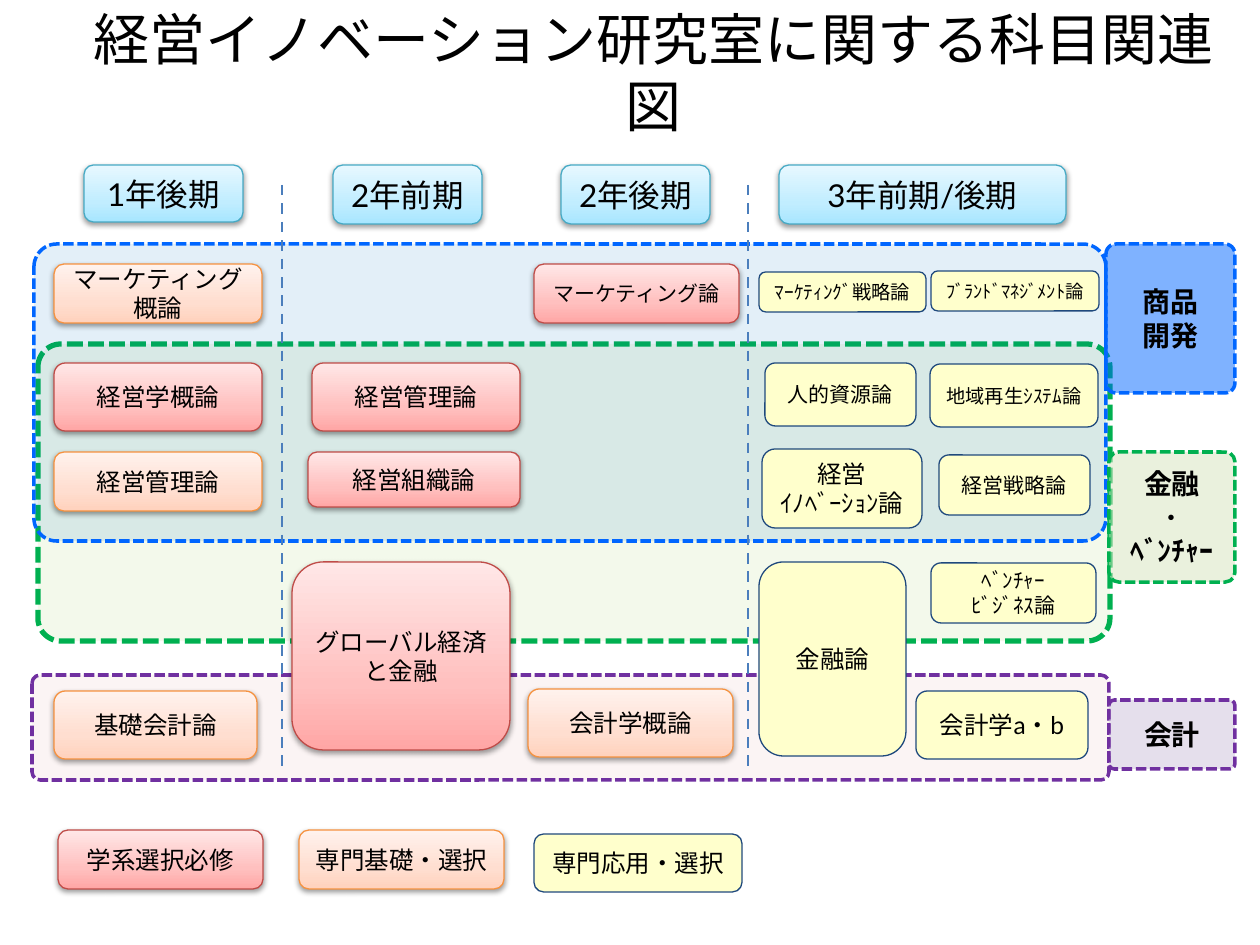
from copy import deepcopy

from lxml.etree import SubElement
from pptx import Presentation
from pptx.dml.color import RGBColor
from pptx.enum.dml import MSO_LINE
from pptx.enum.shapes import MSO_CONNECTOR, MSO_SHAPE
from pptx.enum.text import MSO_ANCHOR, PP_ALIGN
from pptx.oxml.ns import qn
from pptx.util import Emu, Pt

SCALE = 914400 / 126
COLORS = {
    "black": "000000", "navy": "1F497D", "cream": "FFFFCC", "rule": "4B7EBC",
    "blue": "0066FF", "sky": "0070C0", "green": "00B050", "lime": "92D050",
    "sage": "D7E4BD", "purple": "7030A0", "lilac": "CCC1DA", "brick": "C0504D",
    "red_line": "BF4C48", "orange_line": "F69240", "aqua_line": "46AAC5",
    "red_low": "FFA6A5", "red_mid": "FFC0BF", "red_top": "FFE7E7",
    "orange_low": "FFD2BD", "orange_mid": "FFDED0", "orange_top": "FFF2ED",
    "aqua_low": "A7E6FF", "aqua_mid": "C1EDFF", "aqua_top": "E7F8FF",
}

# box in px, fill, opacity in percent, line, line width
BANDS = [
    ((32, 675, 1077, 105), "brick", 6, "purple", 2),
    ((38, 344, 1072, 297), "lime", 11, "green", 3),
    ((34, 244, 1072, 297), "sky", 11, "blue", 2),
]
# box, fill, line, text
TAGS = [
    ((1109, 452, 126, 130), "sage", "green", "金融\n･\nﾍﾞﾝﾁｬｰ"),
    ((1109, 700, 126, 69), "lilac", "purple", "会計"),
    ((1106, 244, 129, 149), "blue", "blue", "商品\n開発"),
]
# kind, text size, then (box, text) pairs
CARDS = [
    ("aqua", 18, [
        ((84, 165, 159, 57), "1年後期"),
        ((333, 165, 149, 59), "2年前期"),
        ((561, 165, 149, 59), "2年後期"),
        ((779, 165, 287, 59), "3年前期/後期"),
    ]),
    ("orange", 14, [
        ((54, 264, 208, 59), "マーケティング概論"),
        ((54, 452, 208, 59), "経営管理論"),
        ((54, 691, 203, 68), "基礎会計論"),
        ((528, 689, 205, 68), "会計学概論"),
        ((299, 830, 205, 59), "専門基礎・選択"),
    ]),
    ("red", 14, [
        ((54, 363, 208, 68), "経営学概論"),
        ((312, 363, 208, 68), "経営管理論"),
        ((308, 452, 212, 55), "経営組織論"),
        ((292, 562, 218, 188), "グローバル経済と金融"),
        ((58, 830, 205, 59), "学系選択必修"),
    ]),
    ("red", 12, [((534, 264, 205, 59), "マーケティング論")]),
    ("cream", 14, [
        ((762, 449, 160, 79), "経営\nｲﾉﾍﾞｰｼｮﾝ論"),
        ((759, 562, 147, 194), "金融論"),
        ((916, 691, 172, 68), "会計学a・b"),
        ((534, 834, 208, 58), "専門応用・選択"),
    ]),
    ("cream", 12, [
        ((765, 363, 151, 63), "人的資源論"),
        ((939, 455, 151, 60), "経営戦略論"),
        ((931, 563, 165, 60), "ﾍﾞﾝﾁｬｰ\nﾋﾞｼﾞﾈｽ論"),
    ]),
    ("cream", 11, [
        ((759, 272, 167, 40), "ﾏｰｹﾃｨﾝｸﾞ戦略論"),
        ((930, 364, 168, 63), "地域再生ｼｽﾃﾑ論"),
    ]),
    ("cream", 10.5, [((931, 271, 168, 40), "ﾌﾞﾗﾝﾄﾞﾏﾈｼﾞﾒﾝﾄ論")]),
]
RULES = [282, 748]


def px(n):
    return Emu(round(n * SCALE))


def rgb(name):
    return RGBColor.from_string(COLORS[name])


def write(shape, text, size=14, font="Lato", bold=False, color="black"):
    frame = shape.text_frame
    frame.word_wrap = True
    frame.vertical_anchor = MSO_ANCHOR.MIDDLE
    frame.text = text
    for para in frame.paragraphs:
        para.alignment = PP_ALIGN.CENTER
        for run in para.runs:
            face = run.font
            face.size, face.name, face.bold = Pt(size), font, bold
            face.color.rgb = rgb(color)
            props = face._element
            props.set("lang", "ja-JP")
            SubElement(props, qn("a:ea"), typeface="Noto Sans CJK JP")


def add_box(slide, box, line, width):
    shape = slide.shapes.add_shape(MSO_SHAPE.ROUNDED_RECTANGLE, *map(px, box))
    shape.shadow.inherit = False
    shape.line.color.rgb = rgb(line)
    shape.line.width = Pt(width)
    return shape


def add_zone(slide, box, fill, alpha, line, width):
    """Add a see-through box with a dashed border."""
    shape = add_box(slide, box, line, width)
    shape.adjustments[0] = 0.077
    shape.line.dash_style = MSO_LINE.SQUARE_DOT
    shape.fill.solid()
    shape.fill.fore_color.rgb = rgb(fill)
    tint = shape._element.spPr.find(qn("a:solidFill"))[0]
    SubElement(tint, qn("a:alpha"), val=str(alpha * 1000))
    return shape


def shade(shape, kind):
    """Give a three-stop gradient, darkest at the foot, and a soft shadow."""
    fill = shape.fill
    fill.gradient()
    fill.gradient_angle = 90
    props = shape._element.spPr
    stops = props.find(qn("a:gradFill")).find(qn("a:gsLst"))
    stops.insert(1, deepcopy(stops[0]))
    parts = zip(fill.gradient_stops, (0, 0.35, 1), ("low", "mid", "top"))
    for stop, place, tone in parts:
        stop.position = place
        stop.color.rgb = rgb(f"{kind}_{tone}")
    glow = SubElement(props.find(qn("a:effectLst")), qn("a:outerShdw"),
                      blurRad="40000", dist="20000", dir="5400000", rotWithShape="0")
    ink = SubElement(glow, qn("a:srgbClr"), val=COLORS["black"])
    SubElement(ink, qn("a:alpha"), val="38000")


def add_card(slide, box, text, kind, size):
    plain = kind == "cream"
    shape = add_box(slide, box, "navy" if plain else f"{kind}_line", 0.75)
    if plain:
        shape.fill.solid()
        shape.fill.fore_color.rgb = rgb(kind)
    else:
        shade(shape, kind)
    write(shape, text, size=size)


def add_rule(slide, x, top, foot):
    rule = slide.shapes.add_connector(MSO_CONNECTOR.STRAIGHT, *map(px, (x, top, x, foot)))
    rule.line.color.rgb = rgb("rule")
    rule.line.width = Pt(1.5)
    rule.line.dash_style = MSO_LINE.DASH
    SubElement(rule._element.spPr, qn("a:effectLst"))


def add_title(slide, box, text):
    title = slide.shapes.title
    title.left, title.top, title.width, title.height = map(px, box)
    write(title, text, size=32, font="Calibri")


def main():
    deck = Presentation()
    deck.slide_width, deck.slide_height = px(1260), px(945)
    slide = deck.slides.add_slide(deck.slide_layouts[5])
    add_title(slide, (63, 38, 1182, 68), "経営イノベーション研究室に関する科目関連図")
    for band in BANDS:
        add_zone(slide, *band)
    for box, fill, line, text in TAGS:
        tag = add_zone(slide, box, fill, 50, line, 2)
        write(tag, text, size=16, font="Noto Sans CJK JP", bold=True)
    for x in RULES:
        add_rule(slide, x, 185, 770)
    for kind, size, cards in CARDS:
        for box, text in cards:
            add_card(slide, box, text, kind, size)
    deck.save("out.pptx")


if __name__ == "__main__":
    main()
